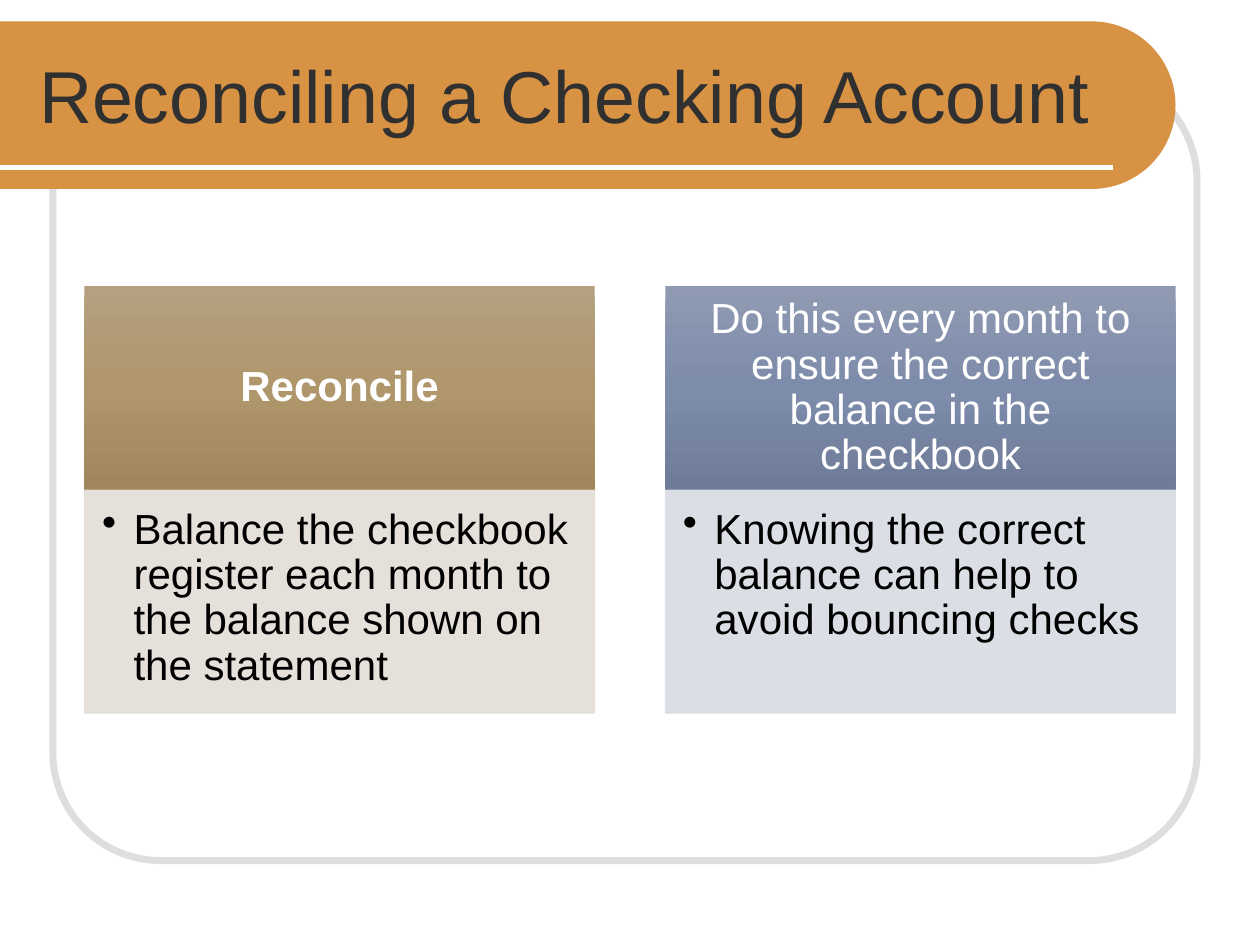
from copy import deepcopy
from math import cos, pi, sin

from pptx import Presentation
from pptx.dml.color import RGBColor
from pptx.enum.shapes import MSO_CONNECTOR, MSO_SHAPE
from pptx.enum.text import MSO_ANCHOR, MSO_AUTO_SIZE, PP_ALIGN
from pptx.oxml.ns import qn
from pptx.util import Pt
from lxml import etree

PX = 9144  # EMU in one px, 100 px to the inch
FONT = "Arial"
RECT, ROUND = MSO_SHAPE.RECTANGLE, MSO_SHAPE.ROUNDED_RECTANGLE
LINE = MSO_CONNECTOR.STRAIGHT
TOP, MIDDLE = MSO_ANCHOR.TOP, MSO_ANCHOR.MIDDLE
LEFT, CENTER = PP_ALIGN.LEFT, PP_ALIGN.CENTER
NO_FIT = MSO_AUTO_SIZE.NONE

WHITE = RGBColor(0xFF, 0xFF, 0xFF)
BLACK = RGBColor(0x00, 0x00, 0x00)
INK = RGBColor(0x30, 0x30, 0x30)
GRAY = RGBColor(0xDE, 0xDE, 0xE0)
ORANGE = RGBColor(0xD8, 0x92, 0x43)
TAN = [RGBColor(0xB5, 0xA1, 0x80), RGBColor(0xAF, 0x96, 0x6B),
       RGBColor(0x9F, 0x86, 0x5B)]
BLUE = [RGBColor(0x8F, 0x9A, 0xB2), RGBColor(0x7E, 0x8C, 0xAB),
        RGBColor(0x6E, 0x7C, 0x9A)]
PALE_TAN = RGBColor(0xE3, 0xDD, 0xD5)
PALE_BLUE = RGBColor(0xD8, 0xDB, 0xE2)

CARDS = [
    ("Reconcile", True,
     "Balance the checkbook register each month to the balance shown on "
     "the statement", TAN, PALE_TAN),
    ("Do this every month to ensure the correct balance in the checkbook",
     False, "Knowing the correct balance can help to avoid bouncing checks",
     BLUE, PALE_BLUE),
]


def add_box(slide, kind, x, y, w, h):
    box = slide.shapes.add_shape(kind, x * PX, y * PX, w * PX, h * PX)
    box.shadow.inherit = False
    return box


def write(shape, text, size, color, align, anchor, pads, bold=False):
    frame = shape.text_frame
    frame.word_wrap = True
    frame.auto_size = NO_FIT
    frame.vertical_anchor = anchor
    (frame.margin_left, frame.margin_top,
     frame.margin_right, frame.margin_bottom) = [p * PX for p in pads]
    para = frame.paragraphs[0]
    para.alignment = align
    run = para.add_run()
    run.text = text
    font = run.font
    font.name, font.size, font.bold = FONT, Pt(size), bold
    font.color.rgb = color
    return para


def shade(shape, colors):
    """Fill from top to bottom with three evenly spaced colors."""
    fill = shape.fill
    fill.gradient()
    fill.gradient_angle = 270
    stops = shape.element.spPr.find(".//" + qn("a:gsLst"))
    stops.insert(1, deepcopy(stops[0]))
    stops[1].set("pos", "50000")
    for stop, color in zip(fill.gradient_stops, colors):
        stop.color.rgb = color


def add_bullet(para, indent):
    props = para._p.get_or_add_pPr()
    props.set("marL", str(indent * PX))
    props.set("indent", str(-indent * PX))
    etree.SubElement(props, qn("a:buChar")).set("char", "•")


def draw_frame(slide, x, y, w, h):
    frame = add_box(slide, ROUND, x, y, w, h)
    frame.adjustments[0] = 0.137
    frame.fill.background()
    frame.line.color.rgb = GRAY
    frame.line.width = Pt(4)


def draw_head(slide, x, y, w, h, text):
    # Band with a half-round right end
    rad = h / 2
    steps = 60
    arc = []
    for i in range(steps + 1):
        turn = pi * i / steps - pi / 2
        arc.append(((x + w - rad + rad * cos(turn)) * PX,
                    (y + rad + rad * sin(turn)) * PX))
    path = slide.shapes.build_freeform(x * PX, y * PX)
    path.add_line_segments(arc + [(x * PX, (y + h) * PX)], close=True)
    band = path.convert_to_shape()
    band.shadow.inherit = False
    band.fill.solid()
    band.fill.fore_color.rgb = ORANGE
    band.line.fill.background()

    # Rule under the title
    level = (y + h - 17) * PX
    rule = slide.shapes.add_connector(
        LINE, x * PX, level, (x + w - 50) * PX, level)
    rule.line.color.rgb = WHITE
    rule.line.width = Pt(3)
    etree.SubElement(rule._element.spPr, qn("a:effectLst"))

    # Title, brought in front of the band
    title = slide.shapes.title
    title.left, title.top = (x + 21) * PX, (y + 8) * PX
    title.width, title.height = (w - 56) * PX, 100 * PX
    write(title, text, 42, INK, LEFT, MIDDLE, (10, 5, 10, 5))
    slide.shapes._spTree.append(title._element)


def draw_card(slide, x, y, w, h, card):
    label, bold, note, colors, pale = card
    top = 162

    # Heading
    head = add_box(slide, RECT, x, y, w, top)
    shade(head, colors)
    head.line.fill.background()
    para = write(head, label, 24, WHITE, CENTER, MIDDLE,
                 (19, 11, 19, 11), bold)
    para.line_spacing = 0.9

    # Bulleted body
    body = add_box(slide, RECT, x, y + top, w, h - top)
    body.fill.solid()
    body.fill.fore_color.rgb = pale
    body.line.color.rgb = pale
    body.line.width = Pt(0.5)
    for tint in body.element.spPr.iter(qn("a:srgbClr")):
        etree.SubElement(tint, qn("a:alpha")).set("val", "90000")
    para = write(body, note, 24, BLACK, LEFT, TOP, (14, 14, 19, 21))
    para.line_spacing = 0.9
    add_bullet(para, 25)


def main():
    deck = Presentation()
    deck.slide_width, deck.slide_height = 1000 * PX, 750 * PX
    slide = deck.slides.add_slide(deck.slide_layouts[5])
    draw_frame(slide, 42, 58, 908, 625)
    draw_head(slide, 0, 17, 933, 133, "Reconciling a Checking Account")
    wide, gap = 405, 56
    for i, card in enumerate(CARDS):
        draw_card(slide, 67 + i * (wide + gap), 227, wide, 339, card)
    deck.save("out.pptx")


if __name__ == "__main__":
    main()
